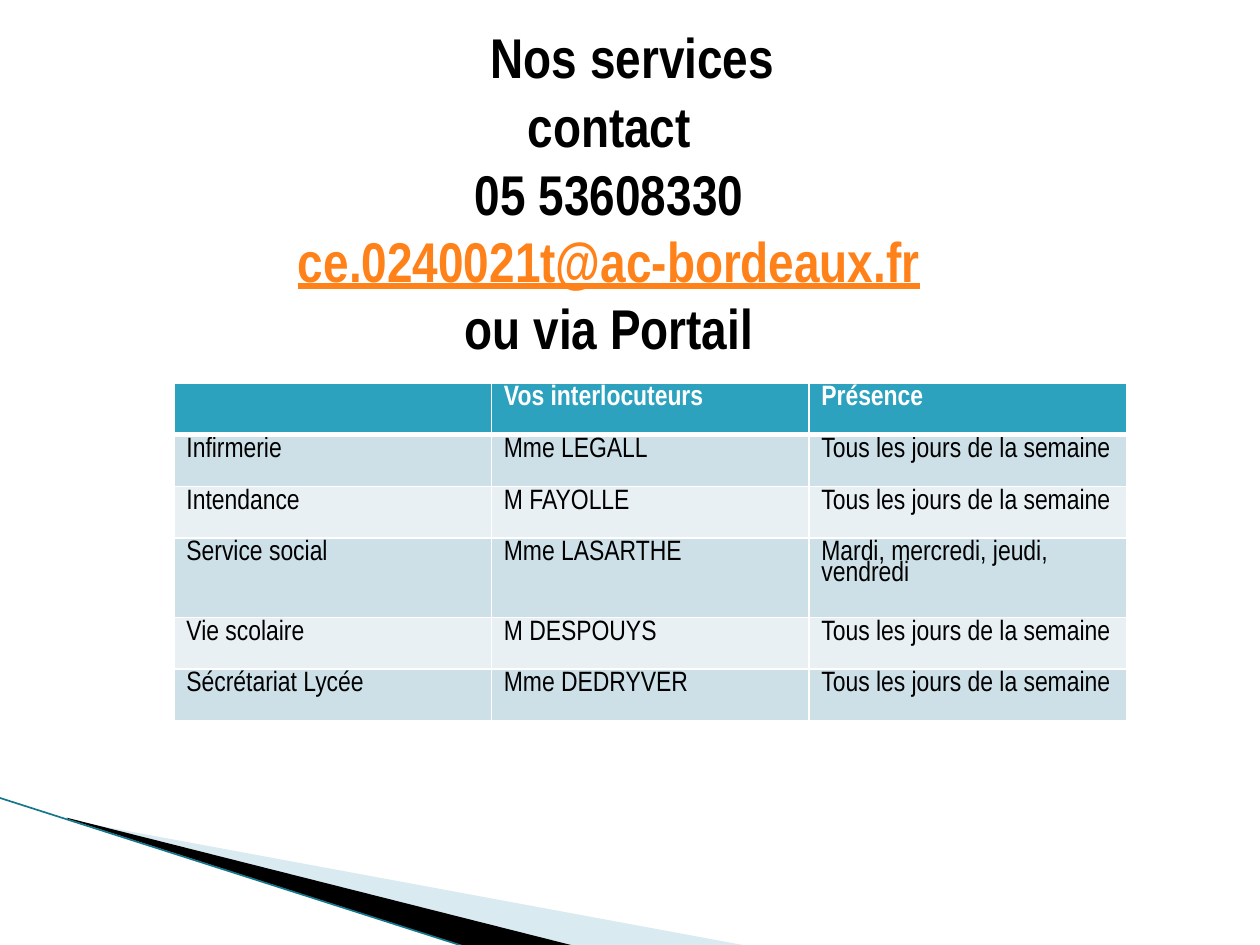
import pptx
import pptx.util
import pptx.dml.color
import pptx.enum.shapes
import pptx.enum.text
import pptx.oxml
import pptx.oxml.ns
from pptx.util import Inches

RGBColor = pptx.dml.color.RGBColor
BLACK = RGBColor(0x00, 0x00, 0x00)
WHITE = RGBColor(0xFF, 0xFF, 0xFF)
ORANGE = RGBColor(0xFF, 0x81, 0x19)
TEAL = RGBColor(0x2D, 0xA2, 0xBF)
DARK_TEAL = RGBColor(0x16, 0x77, 0x8C)
PALE_BLUE = RGBColor(0xA0, 0xCB, 0xDC)
BAND_DARK = RGBColor(0xCD, 0xE0, 0xE8)
BAND_LIGHT = RGBColor(0xE8, 0xF0, 0xF4)
FONT = "Arial Narrow"

DAILY = "Tous les jours de la semaine"
ROWS = [
    ("", "Vos interlocuteurs", "Présence"),
    ("Infirmerie", "Mme LEGALL", DAILY),
    ("Intendance", "M FAYOLLE", DAILY),
    ("Service social", "Mme LASARTHE", "Mardi, mercredi, jeudi, vendredi"),
    ("Vie scolaire", "M DESPOUYS", DAILY),
    ("Sécrétariat Lycée", "Mme DEDRYVER", DAILY),
]
CONTACT = [
    ("contact", BLACK),
    ("05 53608330", BLACK),
    ("ce.0240021t@ac-bordeaux.fr", ORANGE),
    ("ou via Portail", BLACK),
]


def add_run(p, text, size, color, bold=False):
    r = p.add_run()
    r.text = text
    r.font.name = FONT
    r.font.size = pptx.util.Pt(size)
    r.font.bold = bold
    r.font.color.rgb = color
    return r


def append_xml(parent, tag, **attributes):
    child = pptx.oxml.ns.qn(tag)
    element = parent.makeelement(child, attributes)
    parent.append(element)
    return element


def place(sp, left, top, width, height):
    sp.left, sp.top, sp.width, sp.height = left, top, width, height
    tf = sp.text_frame
    tf.word_wrap = True
    tf.auto_size = pptx.enum.text.MSO_AUTO_SIZE.NONE
    tf.vertical_anchor = pptx.enum.text.MSO_ANCHOR.TOP
    return tf


def add_title(s, left, top, width, height):
    p = place(s.shapes.title, left, top, width, height).paragraphs[0]
    p.alignment = pptx.enum.text.PP_ALIGN.CENTER
    add_run(p, "Nos services", 32, BLACK, True)


def add_contact(s, left, top, width, height):
    tf = place(s.placeholders[1], left, top, width, height)
    for i, (text, color) in enumerate(CONTACT):
        p = tf.paragraphs[0] if i == 0 else tf.add_paragraph()
        p.alignment = pptx.enum.text.PP_ALIGN.CENTER
        p.space_before = pptx.util.Pt(0)
        pPr = p._p.get_or_add_pPr()
        pPr.set("marL", "0")
        pPr.set("indent", "0")
        if i == 0:
            pPr.set("marR", str(Inches(0.18)))
        append_xml(pPr, "a:buNone")
        r = add_run(p, text, 32, color, True)
        r.font.underline = color == ORANGE


def set_borders(cell, bottom):
    tcPr = cell._tc.get_or_add_tcPr()
    for i, (side, width) in enumerate(zip("LRTB", (1, 1, 1, bottom))):
        ln = append_xml(tcPr, f"a:ln{side}", w=str(pptx.util.Pt(width)))
        fill = append_xml(ln, "a:solidFill")
        append_xml(fill, "a:srgbClr", val=str(WHITE))
        tcPr.insert(i, ln)


def add_services_table(s, left, top, width, height):
    frame = s.shapes.add_table(len(ROWS), 3, left, top, width, height)
    table = frame.table
    for i, row in enumerate(ROWS):
        header = i == 0
        table.rows[i].height = Inches(0.63 if i == 3 else 0.41)
        for j, text in enumerate(row):
            cell = table.cell(i, j)
            cell.fill.solid()
            band = BAND_DARK if i % 2 else BAND_LIGHT
            cell.fill.fore_color.rgb = TEAL if header else band
            set_borders(cell, 3 if header else 1)
            p = cell.text_frame.paragraphs[0]
            p.line_spacing = 0.78
            p.space_after = pptx.util.Pt(8)
            if text:
                add_run(p, text, 16, WHITE if header else BLACK, header)
            else:
                p.font.size = pptx.util.Pt(16)


def add_wedge(s, points, color, alpha=None):
    corners = [(Inches(x), Inches(y)) for x, y in points]
    builder = s.shapes.build_freeform(*corners[0])
    builder.add_line_segments(corners[1:], close=True)
    sp = builder.convert_to_shape()
    sp.shadow.inherit = False
    sp.fill.solid()
    sp.fill.fore_color.rgb = color
    sp.line.fill.background()
    if alpha:
        clr = sp._element.spPr.find(".//" + pptx.oxml.ns.qn("a:srgbClr"))
        append_xml(clr, "a:alpha", val=str(alpha * 1000))


def add_corner_decoration(s, left, top, width, height):
    x, y = left / Inches(1), top / Inches(1)
    right, bottom = x + width / Inches(1), y + height / Inches(1)
    add_wedge(s, [(x + 0.56, y + 0.18), (right, bottom),
                  (right - 1.39, bottom), (x + 0.56, y + 0.17)], PALE_BLUE, 40)
    add_wedge(s, [(x + 0.54, y + 0.16), (right - 1.38, bottom),
                  (right - 2.23, bottom + 0.01), (x + 0.55, y + 0.17)], BLACK)
    line = s.shapes.add_connector(
        pptx.enum.shapes.MSO_CONNECTOR.STRAIGHT,
        left, top, Inches(right - 2.24), Inches(bottom + 0.01))
    line.line.color.rgb = DARK_TEAL
    line.line.width = pptx.util.Pt(0.95)
    append_xml(line._element.spPr, "a:effectLst")


def main():
    prs = pptx.Presentation()
    prs.slide_width, prs.slide_height = Inches(10), Inches(7.5)
    s = prs.slides.add_slide(prs.slide_layouts[1])
    add_corner_decoration(s, Inches(-0.01), Inches(6.33), Inches(5.96), Inches(1.18))
    add_title(s, Inches(0.75), Inches(0.13), Inches(8.54), Inches(0.63))
    add_contact(s, Inches(2.17), Inches(0.68), Inches(5.51), Inches(2.26))
    add_services_table(s, Inches(1.38), Inches(3.04), Inches(7.56), Inches(2.66))
    prs.save("out.pptx")


if __name__ == "__main__":
    main()
